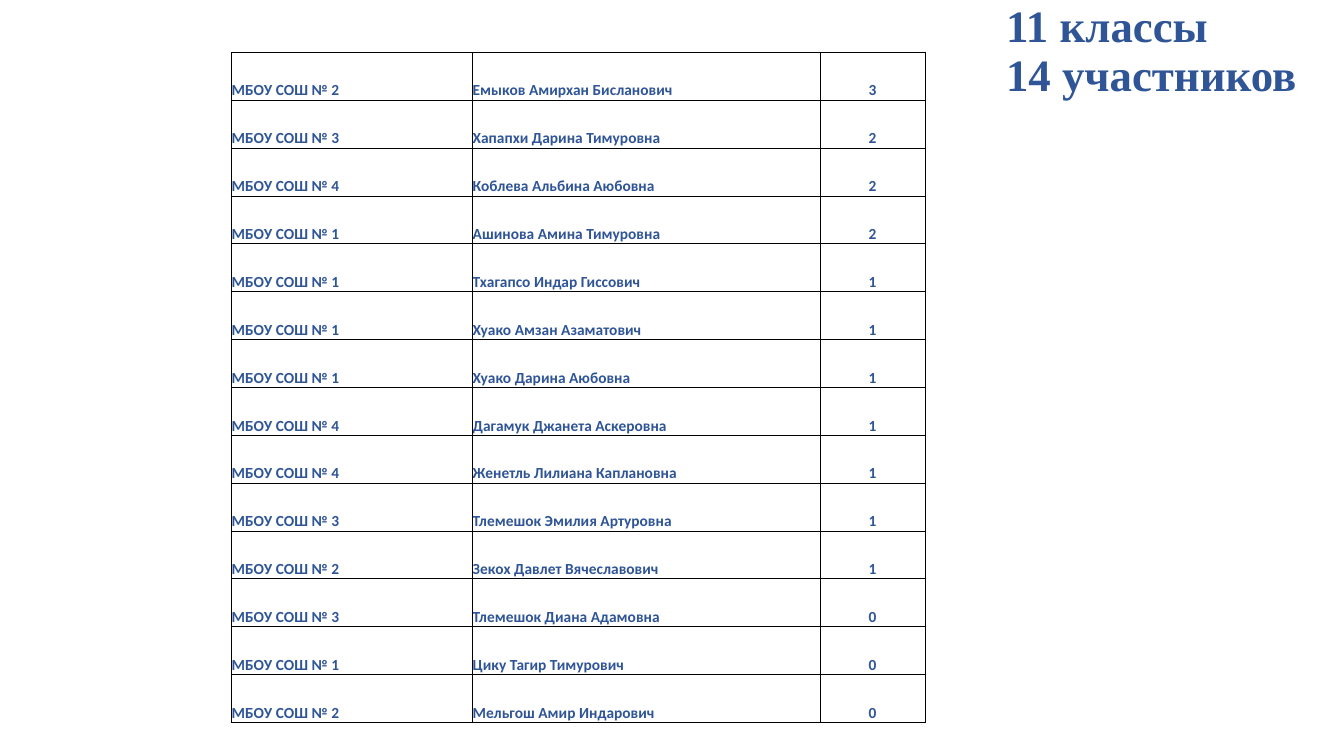
import dataclasses

import pptx
import pptx.dml.color
import pptx.enum.text
import pptx.oxml
import pptx.oxml.ns
import pptx.util

Pt = pptx.util.Pt
RGB = pptx.dml.color.RGBColor
ALIGN = pptx.enum.text.PP_ALIGN
ANCHOR = pptx.enum.text.MSO_ANCHOR


@dataclasses.dataclass(frozen=True)
class Theme:
    text: str = "2F5597"
    border: str = "000000"
    title_font: str = "Times New Roman"
    table_font: str = "Calibri"
    title_size: float = 32
    table_size: float = 11
    border_width: float = 0.5


THEME = Theme()

TITLE_LINES = ["11 классы", "14 участников"]
SCHOOL = "МБОУ СОШ № "
RESULTS = [
    (2, "Емыков Амирхан Бисланович", 3),
    (3, "Хапапхи Дарина Тимуровна", 2),
    (4, "Коблева Альбина Аюбовна", 2),
    (1, "Ашинова Амина Тимуровна", 2),
    (1, "Тхагапсо Индар Гиссович", 1),
    (1, "Хуако Амзан Азаматович", 1),
    (1, "Хуако Дарина Аюбовна", 1),
    (4, "Дагамук Джанета Аскеровна", 1),
    (4, "Женетль Лилиана Каплановна", 1),
    (3, "Тлемешок Эмилия Артуровна", 1),
    (2, "Зекох Давлет Вячеславович", 1),
    (3, "Тлемешок Диана Адамовна", 0),
    (1, "Цику Тагир Тимурович", 0),
    (2, "Мельгош Амир Индарович", 0),
]
COLUMN_WIDTHS = [172.2, 248.6, 75.2]
COLUMN_ALIGNS = [ALIGN.LEFT, ALIGN.LEFT, ALIGN.CENTER]
ROW_HEIGHT = 34.2


def add_run(p, text, font, size):
    r = p.add_run()
    r.text = text
    r.font.name = font
    r.font.size = Pt(size)
    r.font.bold = True
    r.font.color.rgb = RGB.from_string(THEME.text)


def set_title(s, lines, left, top, width, height):
    sp = s.shapes.title
    sp.left, sp.top, sp.width, sp.height = Pt(left), Pt(top), Pt(width), Pt(height)
    tf = sp.text_frame
    tf.word_wrap = True
    tf.auto_size = pptx.enum.text.MSO_AUTO_SIZE.NONE
    tf.vertical_anchor = ANCHOR.MIDDLE
    p = tf.paragraphs[0]
    p.alignment = ALIGN.LEFT
    p.line_spacing = 0.9
    for i, line in enumerate(lines):
        if i:
            p.add_line_break()
        add_run(p, line, THEME.title_font, THEME.title_size)


def set_borders(cell):
    tc_pr = cell._tc.get_or_add_tcPr()
    for i, side in enumerate(["lnL", "lnR", "lnT", "lnB"]):
        tc_pr.insert(i, pptx.oxml.parse_xml(
            f'<a:{side} {pptx.oxml.ns.nsdecls("a")} w="{Pt(THEME.border_width)}">'
            f'<a:solidFill><a:srgbClr val="{THEME.border}"/></a:solidFill>'
            f'</a:{side}>'))


def fill_cell(cell, text, align):
    cell.margin_left = cell.margin_right = cell.margin_top = Pt(0.6)
    cell.margin_bottom = Pt(0)
    cell.vertical_anchor = ANCHOR.BOTTOM
    cell.fill.background()
    set_borders(cell)
    p = cell.text_frame.paragraphs[0]
    p.alignment = align
    add_run(p, text, THEME.table_font, THEME.table_size)


def add_results(s, rows, left, top):
    table = s.shapes.add_table(
        len(rows), len(COLUMN_WIDTHS), Pt(left), Pt(top),
        Pt(sum(COLUMN_WIDTHS)), Pt(ROW_HEIGHT * len(rows))).table
    table.first_row = table.horz_banding = False
    for column, width in zip(table.columns, COLUMN_WIDTHS):
        column.width = Pt(width)
    for row, (school, name, score) in zip(table.rows, rows):
        row.height = Pt(ROW_HEIGHT)
        texts = [f"{SCHOOL}{school}", name, str(score)]
        for cell, text, align in zip(row.cells, texts, COLUMN_ALIGNS):
            fill_cell(cell, text, align)


def main():
    prs = pptx.Presentation()
    prs.slide_width, prs.slide_height = Pt(960), Pt(540)
    s = prs.slides.add_slide(prs.slide_layouts.get_by_name("Title Only"))
    set_title(s, TITLE_LINES, 711.4, 8.6, 234.7, 57.6)
    add_results(s, RESULTS, 164.9, 37.4)
    prs.save("out.pptx")


if __name__ == "__main__":
    main()
